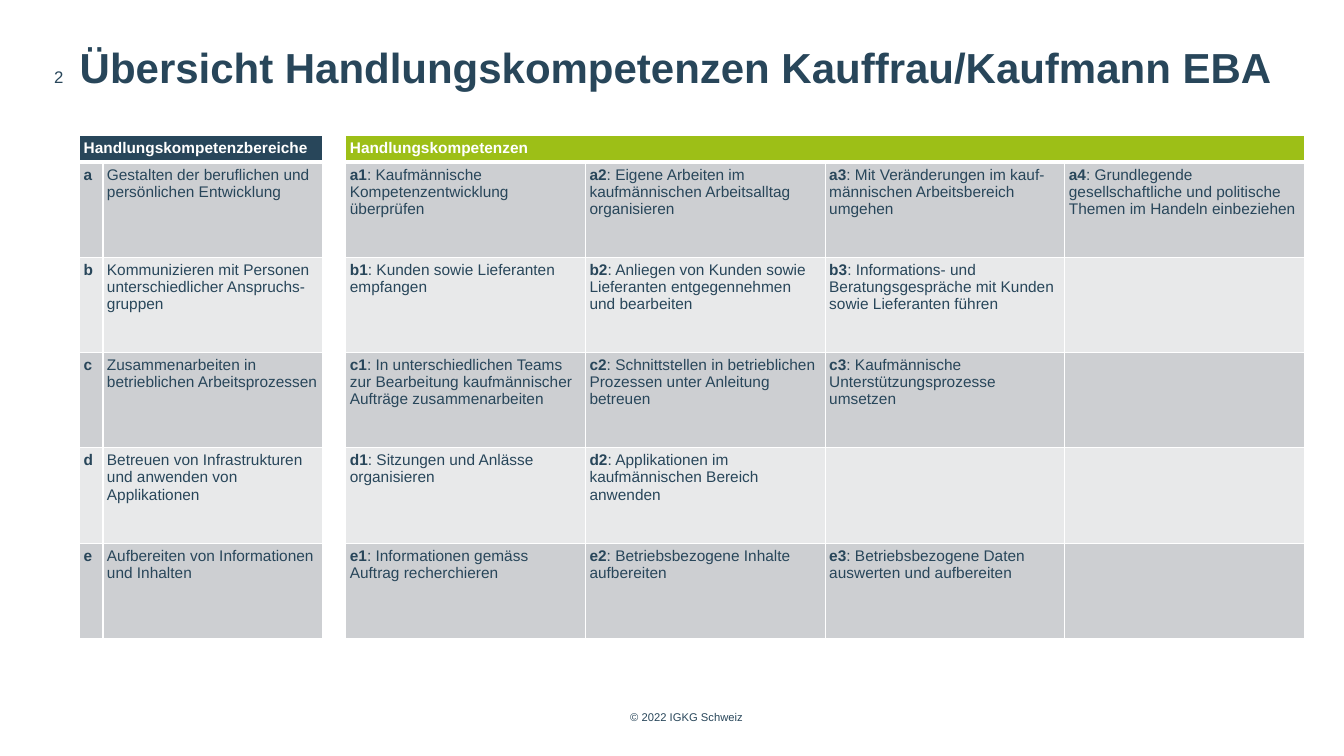
from dataclasses import dataclass

from lxml.etree import SubElement
from pptx import Presentation
from pptx.dml.color import RGBColor
from pptx.enum.text import MSO_ANCHOR, MSO_AUTO_SIZE, PP_ALIGN
from pptx.oxml.ns import qn
from pptx.slide import Slide
from pptx.table import Table, _Cell
from pptx.text.text import TextFrame, _Paragraph
from pptx.util import Inches, Length, Pt

NAVY = RGBColor(0x28, 0x46, 0x5A)
GREEN = RGBColor(0x9D, 0xBF, 0x17)
DARK_GREY = RGBColor(0xCD, 0xCF, 0xD2)
LIGHT_GREY = RGBColor(0xE8, 0xE9, 0xEA)
WHITE = RGBColor(0xFF, 0xFF, 0xFF)

SLIDE_WIDTH, SLIDE_HEIGHT = Inches(13.33), Inches(7.5)
FONT = "Arial"
TABLE_TEXT_SIZE = 11
CELL_INSET = Inches(0.04)
THIN_BORDER, HEADER_BORDER = Pt(1), Pt(3)

# Shares of the slide's width or height, in percent
LEFT, CONTENT_WIDTH = 5.93, 91.15
TABLE_TOP, HEADER_HEIGHT, AREA_HEIGHT = 17.87, 3.33, 12.6
NARROW_COLUMN, AREA_COLUMN = 1.73, 16.35
GAP, FIRST_COMPETENCE, COMPETENCE_COLUMNS = 2, 3, 4
COMPETENCE_COLUMN = (CONTENT_WIDTH - 2 * NARROW_COLUMN - AREA_COLUMN) / COMPETENCE_COLUMNS


@dataclass(frozen=True)
class Area:
    letter: str
    name: str
    competences: tuple[str, ...]


@dataclass(frozen=True)
class Label:
    """A small line of text, placed by shares of the slide in percent."""
    text: str
    left: float
    top: float
    width: float
    height: float
    size: float
    align: PP_ALIGN
    anchor: MSO_ANCHOR
    line_spacing: Length | None = None


AREAS = (
    Area("a", "Gestalten der beruflichen und persönlichen Entwicklung", (
        "Kaufmännische Kompetenzentwicklung überprüfen",
        "Eigene Arbeiten im kaufmännischen Arbeitsalltag organisieren",
        "Mit Veränderungen im kauf-männischen Arbeitsbereich umgehen",
        "Grundlegende gesellschaftliche und politische Themen im Handeln einbeziehen")),
    Area("b", "Kommunizieren mit Personen unterschiedlicher Anspruchs-gruppen", (
        "Kunden sowie Lieferanten empfangen",
        "Anliegen von Kunden sowie Lieferanten entgegennehmen und bearbeiten",
        "Informations- und Beratungsgespräche mit Kunden sowie Lieferanten führen")),
    Area("c", "Zusammenarbeiten in betrieblichen Arbeitsprozessen", (
        "In unterschiedlichen Teams zur Bearbeitung kaufmännischer Aufträge zusammenarbeiten",
        "Schnittstellen in betrieblichen Prozessen unter Anleitung betreuen",
        "Kaufmännische Unterstützungsprozesse umsetzen")),
    Area("d", "Betreuen von Infrastrukturen und anwenden von Applikationen", (
        "Sitzungen und Anlässe organisieren",
        "Applikationen im kaufmännischen Bereich anwenden")),
    Area("e", "Aufbereiten von Informationen und Inhalten", (
        "Informationen gemäss Auftrag recherchieren",
        "Betriebsbezogene Inhalte aufbereiten",
        "Betriebsbezogene Daten auswerten und aufbereiten")),
)

LABELS = (
    Label("© 2022 IGKG Schweiz", 45.39, 94, 11.4, 1.73, 8, PP_ALIGN.CENTER, MSO_ANCHOR.TOP),
    Label("2", 0, 8.67, 4.73, 2.8, 12, PP_ALIGN.RIGHT, MSO_ANCHOR.BOTTOM, Pt(18)),
)


def across(percent: float) -> Length:
    return Length(round(SLIDE_WIDTH * percent / 100))


def down(percent: float) -> Length:
    return Length(round(SLIDE_HEIGHT * percent / 100))


def add_styled_run(paragraph: _Paragraph, text: str, size: float,
                   color: RGBColor = NAVY, bold: bool = False) -> None:
    run = paragraph.add_run()
    run.text = text
    run.font.name = FONT
    run.font.size = Pt(size)
    run.font.bold = bold
    run.font.color.rgb = color


def clear_insets(frame: TextFrame) -> None:
    frame.margin_left = frame.margin_right = frame.margin_top = frame.margin_bottom = 0
    frame.auto_size = MSO_AUTO_SIZE.NONE
    frame.word_wrap = True


def set_title(slide: Slide, text: str) -> None:
    title = slide.shapes.title
    title.left, title.top = across(LEFT), down(6.27)
    title.width, title.height = across(CONTENT_WIDTH), down(8.4)
    frame = title.text_frame
    clear_insets(frame)
    frame.vertical_anchor = MSO_ANCHOR.TOP
    heading = frame.paragraphs[0]
    heading.alignment = PP_ALIGN.LEFT
    heading.line_spacing = Pt(32)
    add_styled_run(heading, text, 30, bold=True)


def add_label(slide: Slide, label: Label) -> None:
    frame = slide.shapes.add_textbox(across(label.left), down(label.top),
                                     across(label.width), down(label.height)).text_frame
    clear_insets(frame)
    frame.vertical_anchor = label.anchor
    line = frame.paragraphs[0]
    line.alignment = label.align
    if label.line_spacing:
        line.line_spacing = label.line_spacing
    add_styled_run(line, label.text, label.size)


def style_cell(cell: _Cell, fill: RGBColor, top: Length, bottom: Length) -> None:
    """Sets insets, white borders, fill and the text size of an empty cell."""
    cell.margin_left = cell.margin_right = cell.margin_top = cell.margin_bottom = CELL_INSET
    properties = cell._tc.get_or_add_tcPr()
    borders = {"a:lnL": THIN_BORDER, "a:lnR": THIN_BORDER, "a:lnT": top, "a:lnB": bottom}
    for side, width in borders.items():
        border = SubElement(properties, qn(side), w=str(width))
        SubElement(SubElement(border, qn("a:solidFill")), qn("a:srgbClr"), val=str(WHITE))
    cell.fill.solid()
    cell.fill.fore_color.rgb = fill
    SubElement(cell.text_frame.paragraphs[0]._p, qn("a:endParaRPr"),
               sz=str(TABLE_TEXT_SIZE * 100))


def write_cell(cell: _Cell, bold_text: str = "", plain_text: str = "",
               color: RGBColor = NAVY) -> None:
    for text, bold in ((bold_text, True), (plain_text, False)):
        if text:
            add_styled_run(cell.text_frame.paragraphs[0], text, TABLE_TEXT_SIZE, color, bold)


def fill_header(table: Table) -> None:
    last = len(table.columns) - 1
    for column in range(last + 1):
        fill = NAVY if column < GAP else WHITE if column == GAP else GREEN
        style_cell(table.cell(0, column), fill, THIN_BORDER, HEADER_BORDER)
    for first, end, heading in ((0, GAP - 1, "Handlungskompetenzbereiche"),
                                (FIRST_COMPETENCE, last, "Handlungskompetenzen")):
        table.cell(0, first).merge(table.cell(0, end))
        write_cell(table.cell(0, first), heading, color=WHITE)


def fill_area(table: Table, row: int, area: Area) -> None:
    band = DARK_GREY if row % 2 else LIGHT_GREY
    top = HEADER_BORDER if row == 1 else THIN_BORDER
    for column in range(len(table.columns)):
        style_cell(table.cell(row, column), WHITE if column == GAP else band, top, THIN_BORDER)
    write_cell(table.cell(row, 0), area.letter)
    write_cell(table.cell(row, 1), plain_text=area.name)
    for number, competence in enumerate(area.competences, start=1):
        write_cell(table.cell(row, GAP + number), f"{area.letter}{number}", f": {competence}")


def add_competence_table(slide: Slide) -> None:
    widths = [NARROW_COLUMN, AREA_COLUMN, NARROW_COLUMN] + [COMPETENCE_COLUMN] * COMPETENCE_COLUMNS
    heights = [HEADER_HEIGHT] + [AREA_HEIGHT] * len(AREAS)
    table = slide.shapes.add_table(len(heights), len(widths), across(LEFT), down(TABLE_TOP),
                                   across(CONTENT_WIDTH), down(sum(heights))).table
    table.horz_banding = False
    for column, width in zip(table.columns, widths):
        column.width = across(width)
    for row, height in zip(table.rows, heights):
        row.height = down(height)
    fill_header(table)
    for number, area in enumerate(AREAS, start=1):
        fill_area(table, number, area)


def main() -> None:
    presentation = Presentation()
    presentation.slide_width, presentation.slide_height = SLIDE_WIDTH, SLIDE_HEIGHT
    slide = presentation.slides.add_slide(presentation.slide_layouts.get_by_name("Title Only"))
    set_title(slide, "Übersicht Handlungskompetenzen Kauffrau/Kaufmann EBA")
    add_competence_table(slide)
    for label in LABELS:
        add_label(slide, label)
    presentation.save("out.pptx")


if __name__ == "__main__":
    main()
